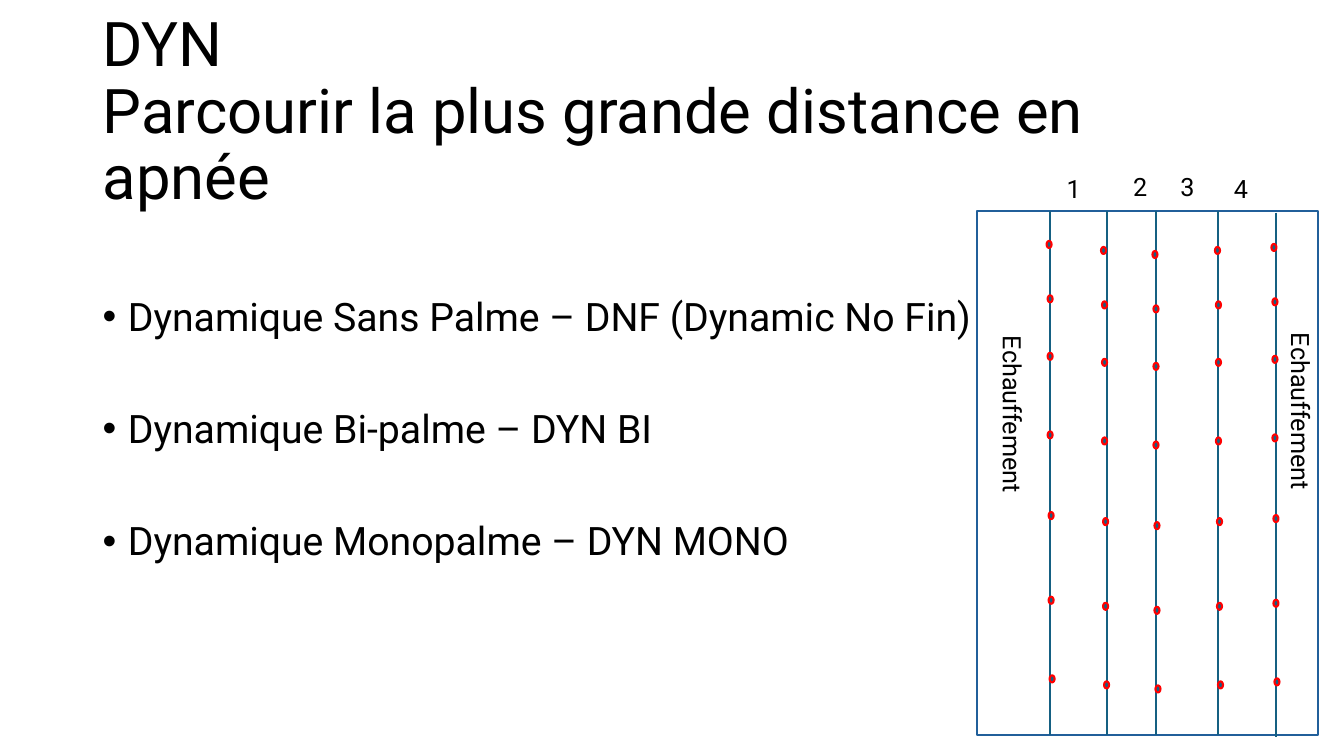
"""Build the DYN slide: dynamic apnea categories beside a plan of the pool lanes."""
from pptx import Presentation
from pptx.dml.color import RGBColor
from pptx.enum.shapes import MSO_CONNECTOR, MSO_SHAPE
from pptx.enum.text import MSO_ANCHOR
from pptx.oxml.ns import qn
from pptx.util import Pt
from lxml import etree

LINE = MSO_CONNECTOR.STRAIGHT
RECT, OVAL = MSO_SHAPE.RECTANGLE, MSO_SHAPE.OVAL
TOP, MIDDLE = MSO_ANCHOR.TOP, MSO_ANCHOR.MIDDLE
PX = 9144
FONT, INK, TEAL = "Roboto", "000000", "156082"

TITLE = "DYN\vParcourir la plus grande distance en apnée"
EVENTS = [
    "Dynamique Sans Palme – DNF (Dynamic No Fin)",
    "Dynamique Bi-palme – DYN BI",
    "Dynamique Monopalme – DYN MONO",
]
POOL = (969, 209, 338, 520)
ROPES = [(1041, 209), (1098, 209), (1147, 209), (1208, 209), (1266, 211)]
BUOYS = [(1038, 0), (1092, 6), (1143, 10), (1205, 6), (1261, 3)]
ROWS = [(0, 239), (1, 293), (1, 350), (1, 428), (2, 508), (2, 592), (3, 670)]
LANES = [("1", 1048, 167), ("2", 1114, 165), ("3", 1161, 165), ("4", 1214, 167)]
WARMUP = [(846, 462), (1132, 459)]

TITLE_FMT = {"line_spacing": 0.9}
EVENT_FMT = {"line_spacing": 0.9, "space_before": Pt(10), "space_after": Pt(40)}


def color(code):
    return RGBColor.from_string(code)


def emu(*sizes):
    return [size * PX for size in sizes]


def write(box, lines, size, fmt=None, anchor=TOP, turn=0, bullet=False):
    item = slide.shapes.add_textbox(*emu(*box))
    item.rotation = turn
    frame = item.text_frame
    frame.word_wrap = True
    frame.vertical_anchor = anchor
    frame.text = "\n".join(lines)
    for para in frame.paragraphs:
        for key, value in (fmt or {}).items():
            setattr(para, key, value)
        for run in para.runs:
            run.font.name, run.font.size = FONT, Pt(size)
            run.font.color.rgb = color(INK)
        if bullet:
            props = para._p.get_or_add_pPr()
            props.set("marL", str(25 * PX))
            props.set("indent", str(-25 * PX))
            etree.SubElement(props, qn("a:buFont")).set("typeface", "Arial")
            etree.SubElement(props, qn("a:buChar")).set("char", "•")


def draw(kind, box, fill, edge):
    item = slide.shapes.add_shape(kind, *emu(*box))
    item.shadow.inherit = False
    item.fill.solid()
    item.fill.fore_color.rgb = color(fill)
    item.line.color.rgb = color(edge)
    item.line.width = Pt(1.5)


def rope(x, y):
    item = slide.shapes.add_connector(LINE, *emu(x, y, x, y + POOL[3]))
    item.line.color.rgb = color(TEAL)
    item.line.width = Pt(1.5)
    etree.SubElement(item._element.spPr, qn("a:effectLst"))


deck = Presentation()
deck.slide_width, deck.slide_height = emu(1333, 750)
slide = deck.slides.add_slide(deck.slide_layouts[6])

write((92, 40, 1150, 145), [TITLE], 44, TITLE_FMT, MIDDLE)
write((92, 290, 1150, 386), EVENTS, 28, EVENT_FMT, bullet=True)

draw(RECT, POOL, "FFFFFF", "215F9A")
for x, y in ROPES:
    rope(x, y)
for shift, y in ROWS:
    for x, drop in BUOYS:
        draw(OVAL, (x + shift, y + drop, 5, 7), TEAL, "FF0000")

for lane, x, y in LANES:
    write((x, y, 39, 40), [lane], 18)
for x, y in WARMUP:
    write((x, y, 317, 40), ["Echauffement"], 18, turn=90)

deck.save("out.pptx")
